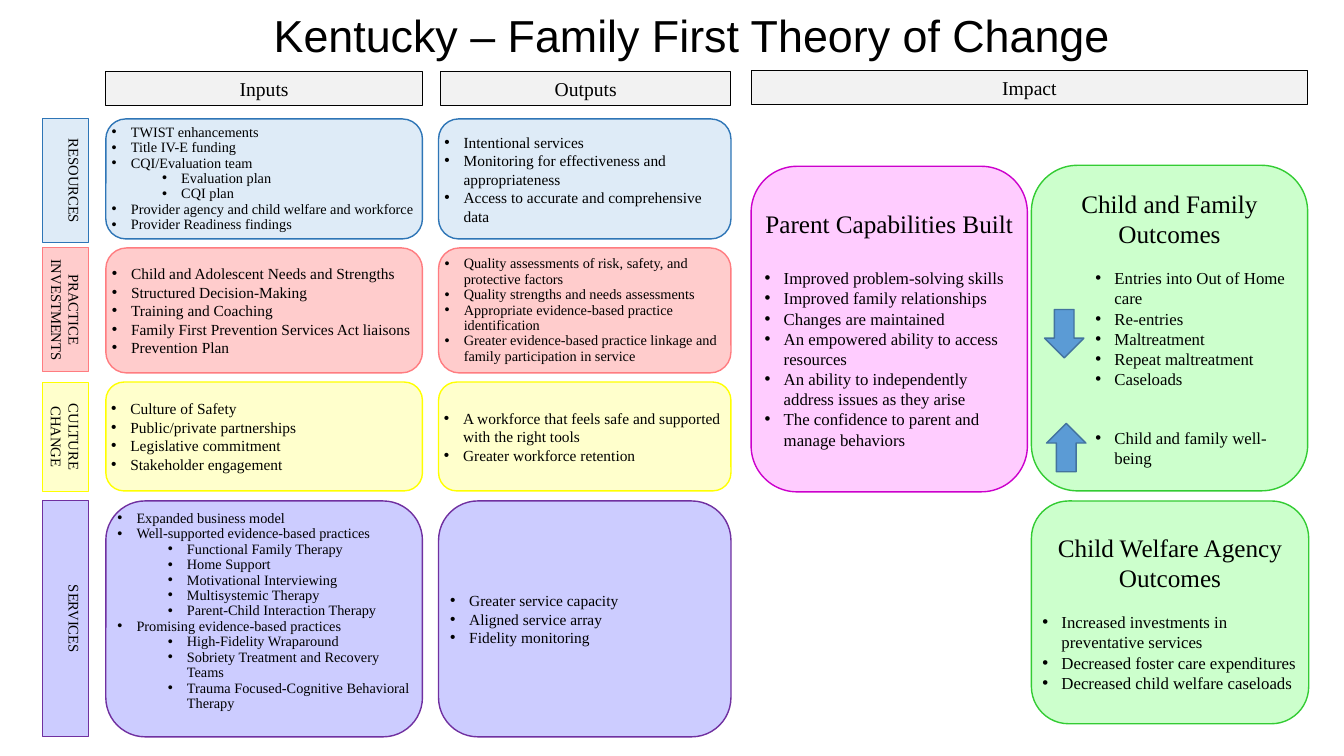
from lxml import etree
from pptx import Presentation
from pptx.dml.color import RGBColor
from pptx.enum.shapes import MSO_SHAPE
from pptx.enum.text import MSO_ANCHOR, PP_ALIGN
from pptx.oxml.ns import qn
from pptx.util import Inches, Pt

# Content: a nested list holds the sub-bullets of the line before it
TITLE = "Kentucky – Family First Theory of Change"
HEADERS = [("Inputs", 1.05, 0.71, 3.14), ("Outputs", 4.37, 0.71, 2.88), ("Impact", 7.45, 0.7, 5.52)]

ROWS = [
    dict(label="RESOURCES", color="blue", top=1.18, height=1.19, label_length=1.23,
         inputs=(10.2, ["TWIST enhancements", "Title IV-E funding", "CQI/Evaluation team",
                        ["Evaluation plan", "CQI plan"],
                        "Provider agency and child welfare and workforce",
                        "Provider Readiness findings"]),
         outputs=(11, ["Intentional services",
                       "Monitoring for effectiveness and appropriateness",
                       "Access to accurate and comprehensive data"])),
    dict(label="PRACTICE INVESTMENTS", color="red", top=2.46, height=1.24, label_length=1.23,
         inputs=(11, ["Child and Adolescent Needs and Strengths", "Structured Decision-Making",
                      "Training and Coaching", "Family First Prevention Services Act liaisons",
                      "Prevention Plan"]),
         outputs=(10.2, ["Quality assessments of risk, safety, and protective factors",
                         "Quality strengths and needs assessments",
                         "Appropriate evidence-based practice identification",
                         "Greater evidence-based practice linkage and family participation in service"])),
    dict(label="CULTURE CHANGE", color="yellow", top=3.79, height=1.08, label_length=1.09,
         inputs=(11, ["Culture of Safety", "Public/private partnerships",
                      "Legislative commitment", "Stakeholder engagement"]),
         outputs=(11, ["A workforce that feels safe and supported with the right tools",
                       "Greater workforce retention"])),
    dict(label="SERVICES", color="purple", top=4.97, height=2.34, label_length=2.34,
         inputs=(10.2, ["Expanded business model", "Well-supported evidence-based practices",
                        ["Functional Family Therapy", "Home Support", "Motivational Interviewing",
                         "Multisystemic Therapy", "Parent-Child Interaction Therapy"],
                        "Promising evidence-based practices",
                        ["High-Fidelity Wraparound", "Sobriety Treatment and Recovery Teams",
                         "Trauma Focused-Cognitive Behavioral Therapy"]]),
         outputs=(11, ["Greater service capacity", "Aligned service array", "Fidelity monitoring"]),
         inputs_bottom=0.15),
]
COLUMNS = {"inputs": (1.05, 3.14), "outputs": (4.35, 2.9)}

IMPACTS = [
    dict(title="Parent Capabilities Built", color="magenta", box=(7.45, 1.65, 2.74, 3.23), gap=20.7,
         items=["Improved problem-solving skills", "Improved family relationships",
                "Changes are maintained", "An empowered ability to access resources",
                "An ability to independently address issues as they arise",
                "The confidence to parent and manage behaviors"]),
    dict(title="Child and Family Outcomes", color="green", box=(10.23, 1.64, 2.74, 3.23), gap=13.8,
         items=[["Entries into Out of Home care", "Re-entries", "Maltreatment",
                 "Repeat maltreatment", "Caseloads", "Child and family well-being"]],
         last_gap=27.6),
    dict(title="Child Welfare Agency Outcomes", color="green", box=(10.23, 4.97, 2.75, 2.21), gap=13.8,
         items=["Increased investments in preventative services",
                "Decreased foster care expenditures", "Decreased child welfare caseloads"]),
]
ARROWS = [(10.36, 3.07, 0), (10.38, 4.2, 180)]

# Fill and line of each theme
COLORS = {
    "blue": ("DEEBF7", "2E75B6"), "red": ("FFCCCC", "FF7C80"), "yellow": ("FFFFCC", "FFFF00"),
    "purple": ("CCCCFF", "7030A0"), "magenta": ("FFCCFF", "CC00CC"), "green": ("CCFFCC", "33CC33"),
    "header": ("F2F2F2", "000000"), "arrow": ("5B9BD5", "43739E"), "text": ("000000", "000000"),
}
SERIF = "Times New Roman"
LABEL_CENTER, LABEL_WIDTH = 0.65, 0.45

prs = Presentation()
prs.slide_width, prs.slide_height = Inches(13.33), Inches(7.5)
s = prs.slides.add_slide(prs.slide_layouts[6])


def add_box(kind, box, color, line_width):
    sp = s.shapes.add_shape(kind, *map(Inches, box))
    fill, line = COLORS[color]
    sp.shadow.inherit = False
    sp.fill.solid()
    sp.fill.fore_color.rgb = RGBColor.from_string(fill)
    sp.line.color.rgb = RGBColor.from_string(line)
    sp.line.width = Pt(line_width)
    return sp


def write(p, text, size, font=SERIF, **formats):
    r = p.add_run()
    r.text = text
    r.font.color.rgb = RGBColor.from_string(COLORS["text"][0])
    for name, value in dict(size=Pt(size), name=font).items():
        setattr(r.font, name, value)
    for name, value in formats.items():
        setattr(p, name, value)


def add_caption(sp, text, size, font=SERIF):
    tf = sp.text_frame
    tf.word_wrap = True
    tf.vertical_anchor = MSO_ANCHOR.TOP
    write(tf.paragraphs[0], text, size, font, alignment=PP_ALIGN.CENTER)


def add_card(box, color, bottom=0):
    tf = add_box(MSO_SHAPE.ROUNDED_RECTANGLE, box, color, 1).text_frame
    margins = dict(margin_left=0, margin_right=0, margin_top=0, margin_bottom=Inches(bottom))
    for name, value in dict(margins, word_wrap=True, vertical_anchor=MSO_ANCHOR.MIDDLE).items():
        setattr(tf, name, value)
    return tf


def add_bullets(tf, items, size, level=0):
    for item in items:
        if isinstance(item, list):
            add_bullets(tf, item, size, level + 1)
            continue
        p = tf.paragraphs[0] if not tf.text else tf.add_paragraph()
        pPr = p._p.get_or_add_pPr()
        pPr.set("marL", str(Inches(0.19 + 0.5 * level)))
        pPr.set("indent", str(Inches(-0.19)))
        etree.SubElement(pPr, qn("a:buFont")).set("typeface", "Arial")
        etree.SubElement(pPr, qn("a:buChar")).set("char", "•")
        write(p, item, size, level=level, alignment=PP_ALIGN.LEFT,
              line_spacing=0.9 if size < 11 else 1.0)


# Title and column headers
add_caption(s.shapes.add_textbox(*map(Inches, (0.79, 0.03, 12.15, 1.25))), TITLE, 32, "Arial")
for text, left, top, width in HEADERS:
    add_caption(add_box(MSO_SHAPE.RECTANGLE, (left, top, width, 0.34), "header", 0.75), text, 14)

# Rows: a turned label, then the inputs and outputs cards
for row in ROWS:
    length = row["label_length"]
    label_box = (LABEL_CENTER - length / 2, row["top"] + (length - LABEL_WIDTH) / 2, length, LABEL_WIDTH)
    sp = add_box(MSO_SHAPE.RECTANGLE, label_box, row["color"], 0.75)
    sp.rotation = 90
    add_caption(sp, row["label"], 10.5)
    for column, (left, width) in COLUMNS.items():
        size, items = row[column]
        tf = add_card((left, row["top"], width, row["height"]), row["color"],
                      row.get(column + "_bottom", 0))
        add_bullets(tf, items, size)

# Impact cards
for impact in IMPACTS:
    tf = add_card(impact["box"], impact["color"])
    write(tf.paragraphs[0], impact["title"], 18, alignment=PP_ALIGN.CENTER,
          space_after=Pt(impact["gap"]))
    add_bullets(tf, impact["items"], 12)
    if "last_gap" in impact:
        tf.paragraphs[-1].space_before = Pt(impact["last_gap"])

# Down and up arrows
for left, top, turn in ARROWS:
    add_box(MSO_SHAPE.DOWN_ARROW, (left, top, 0.39, 0.48), "arrow", 1).rotation = turn

prs.save("out.pptx")
